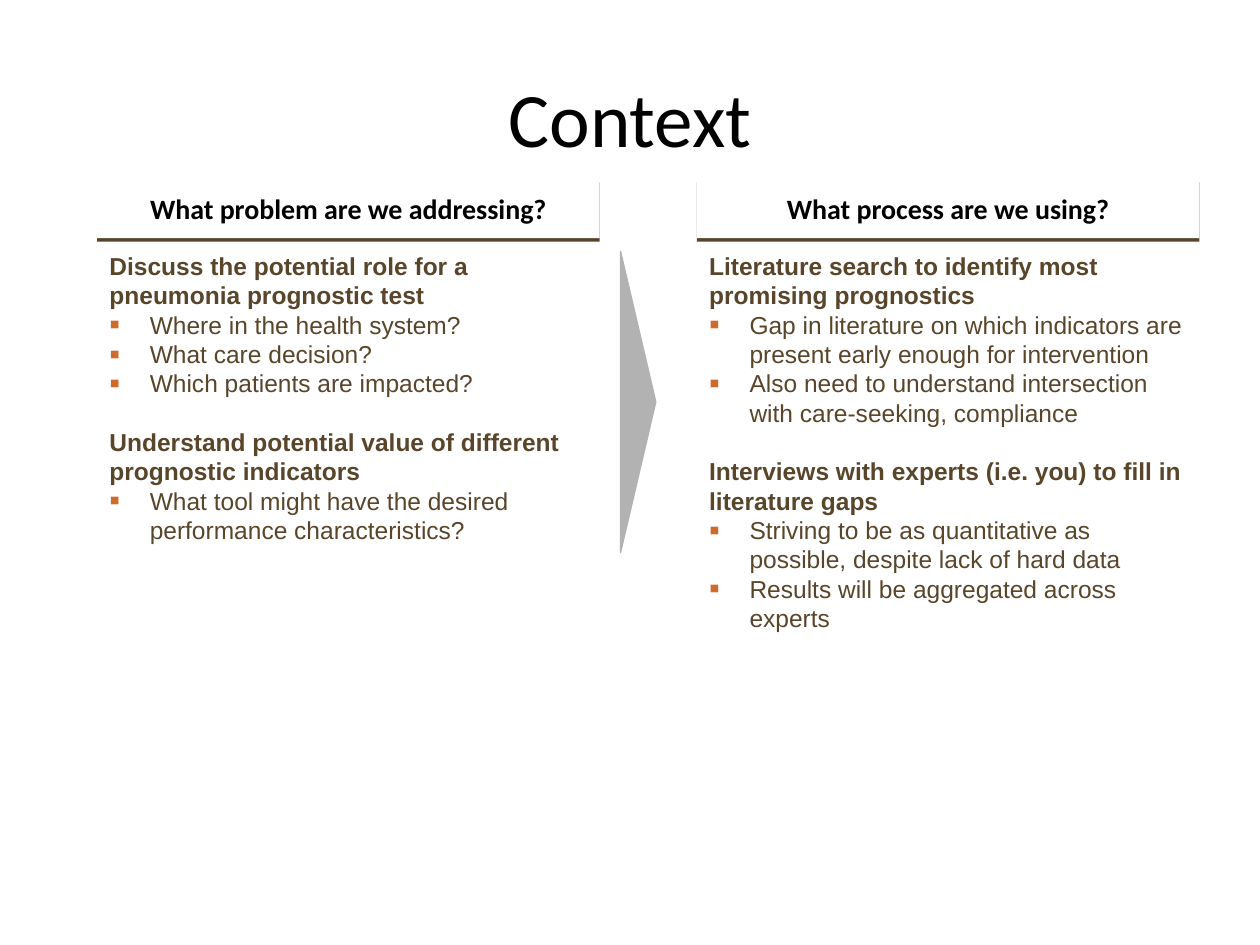
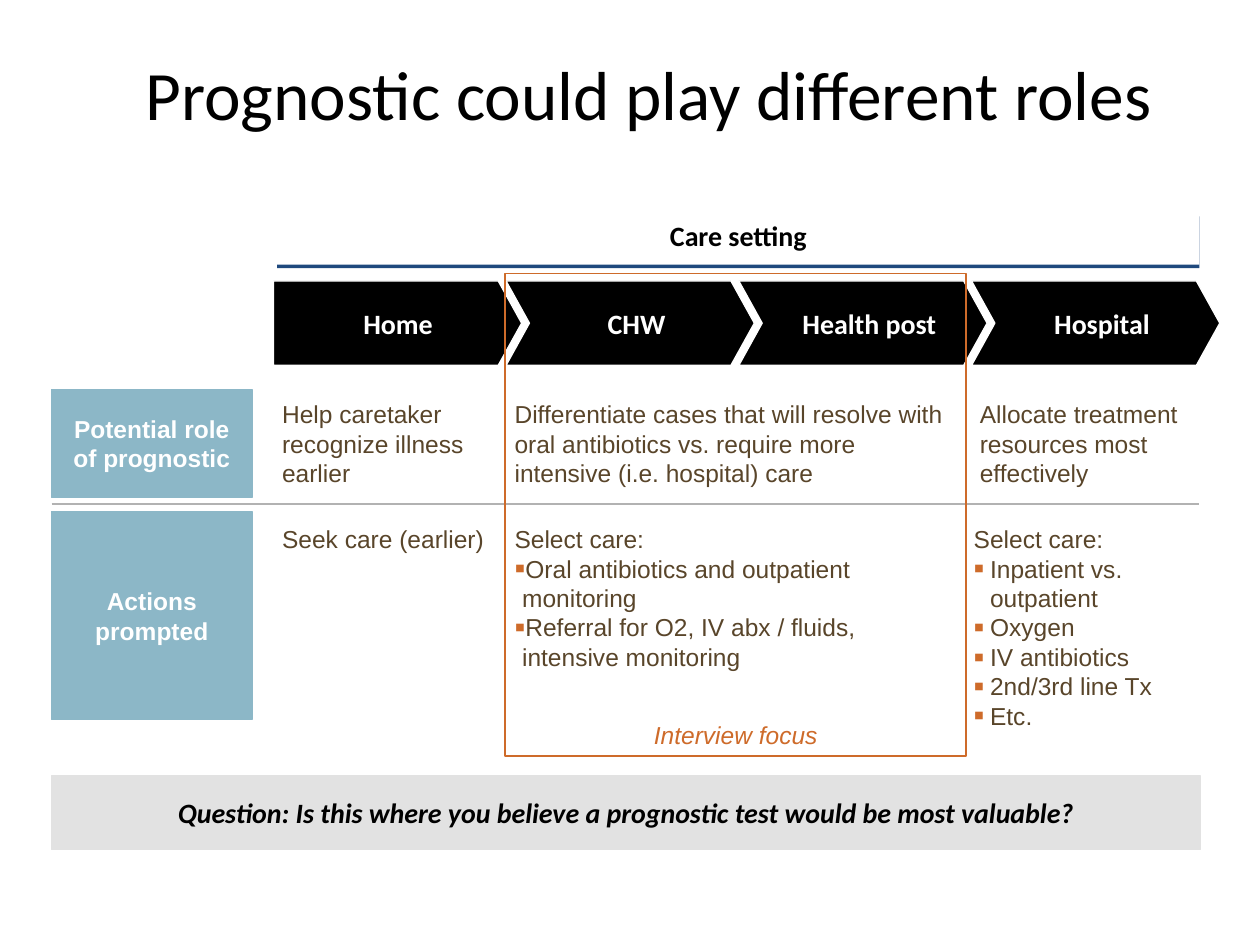
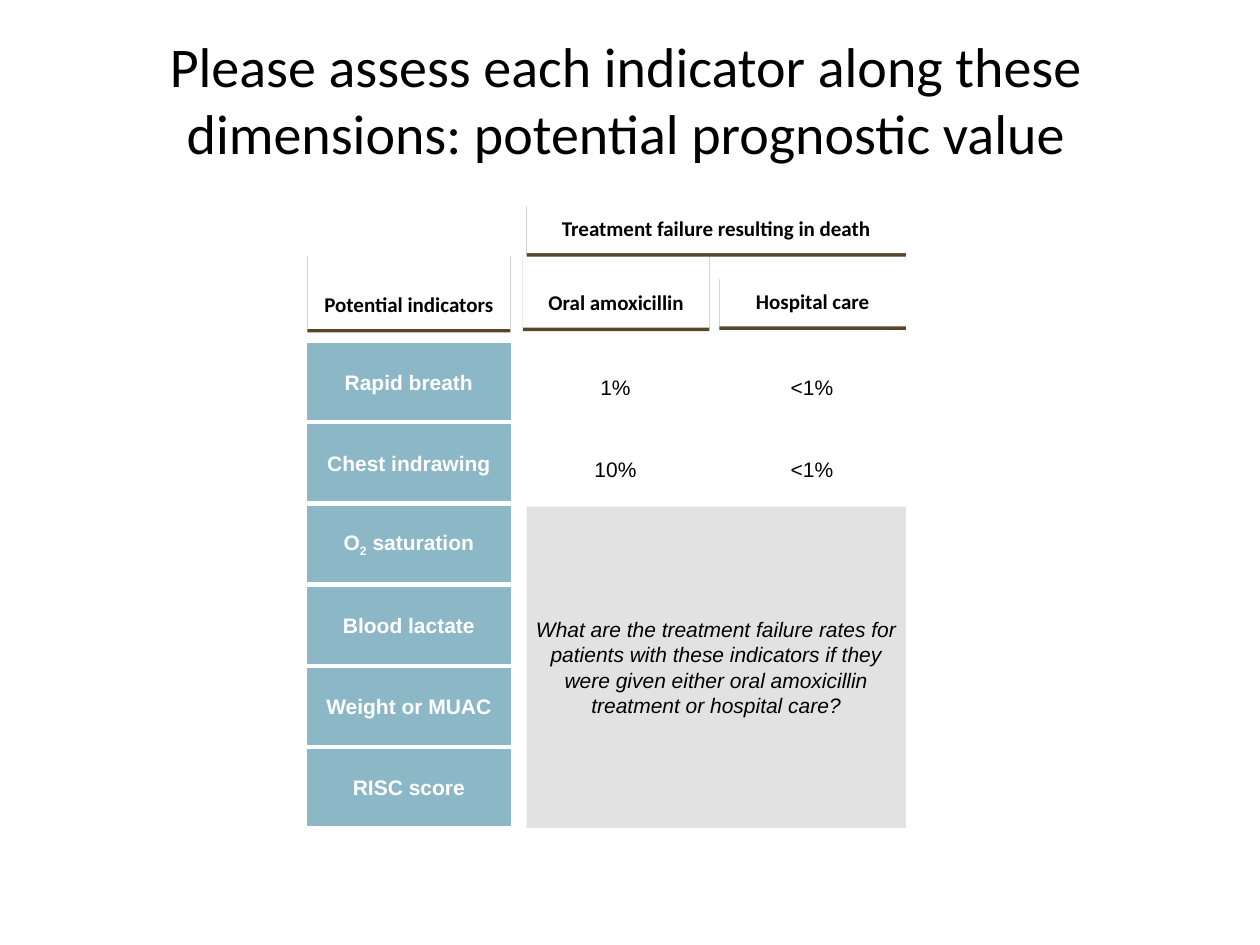
from dataclasses import dataclass
from typing import NamedTuple

from lxml.etree import SubElement
from pptx import Presentation
from pptx.dml.color import RGBColor
from pptx.enum.shapes import MSO_CONNECTOR, MSO_SHAPE
from pptx.enum.text import MSO_ANCHOR, PP_ALIGN
from pptx.oxml.ns import qn
from pptx.util import Emu, Inches, Pt


@dataclass(frozen=True)
class Theme:
    black: str = "000000"
    white: str = "FFFFFF"
    brown: str = "59452A"
    navy: str = "1F497D"
    orange: str = "CE6B2A"
    teal: str = "8CB7C7"
    pale: str = "E2E2E2"
    gray: str = "B2B2B2"
    sans: str = "Arial"
    head: str = "Calibri"
    title: float = 44
    wide: float = 39.6
    long: float = 32
    lead: float = 16
    body: float = 14
    small: float = 12
    gap: float = 16.5
    thin: float = 0.75
    rule: float = 1


class Box(NamedTuple):
    x: float
    y: float
    w: float
    h: float

    def cut(self, x, y, w, h):
        return Box(self.x + x, self.y + y, w, h)

    def size(self):
        return [Emu(round(n * CELL)) for n in self]


class Line(NamedTuple):
    text: str
    bold: bool = False
    dot: bool = False
    gap: bool = False
    hang: float = 0


THEME = Theme()
COLS, ROWS = 100, 75
CELL = Inches(10) / COLS
EVEN = (1, 1, 1, 1)
SLIM = (0.5, 0.5, 0.5, 0.5)
LEFT, MID = PP_ALIGN.LEFT, PP_ALIGN.CENTER
TOP, CORE, BASE = MSO_ANCHOR.TOP, MSO_ANCHOR.MIDDLE, MSO_ANCHOR.BOTTOM


def put(item, **values):
    for key, value in values.items():
        setattr(item, key, value)


def tint(code):
    return RGBColor.from_string(code)


def look(size, color, name=THEME.sans, **more):
    return dict(size=Pt(size), name=name, **more), color


def mark(para, line):
    props = para._p.get_or_add_pPr()
    if line.hang:
        hang = round(line.hang * CELL)
        props.set("marL", str(hang))
        props.set("indent", str(-hang))
    if line.dot:
        color = SubElement(props, qn("a:buClr"))
        SubElement(color, qn("a:srgbClr"), val=THEME.orange)
        SubElement(props, qn("a:buSzPct"), val="125000")
        SubElement(props, qn("a:buFont"), typeface=THEME.sans)
        SubElement(props, qn("a:buChar"), char="▪")


def write(shape, lines, style, align=MID, anchor=CORE, inset=EVEN):
    frame = shape.text_frame
    sides = ("margin_left", "margin_top", "margin_right", "margin_bottom")
    room = {key: Emu(round(n * CELL)) for key, n in zip(sides, inset)}
    put(frame, word_wrap=True, vertical_anchor=anchor, **room)
    form, color = style
    for spot, line in enumerate(lines):
        para = frame.add_paragraph() if spot else frame.paragraphs[0]
        mark(para, line)
        para.alignment = align
        if line.gap:
            para.space_before = Pt(THEME.gap)
        for turn, piece in enumerate(line.text.split("_")):
            run = para.add_run()
            run.text = piece
            put(run.font, **{"bold": line.bold, **form})
            run.font.color.rgb = tint(color)
            if turn % 2:
                run._r.get_or_add_rPr().set("baseline", "-25000")


def label(slide, box, lines, style, **more):
    write(slide.shapes.add_textbox(*box.size()), lines, style, **more)


def block(slide, box, fill=None, edge=None, kind=MSO_SHAPE.RECTANGLE, width=THEME.thin):
    shape = slide.shapes.add_shape(kind, *box.size())
    shape.shadow.inherit = False
    for part, code in ((shape.fill, fill), (shape.line.fill, edge)):
        if code:
            part.solid()
            part.fore_color.rgb = tint(code)
        else:
            part.background()
    if edge:
        shape.line.width = Pt(width)
    return shape


def title(slide, box, text, size, low=0.5):
    label(slide, box, [Line(text)], look(size, THEME.black, THEME.head), inset=(1, 0.5, 1, low))


def header(slide, box, text, size=THEME.lead, under=THEME.brown):
    shape = block(slide, box, THEME.white)
    glow = shape._element.spPr.find(qn("a:effectLst"))
    drop = SubElement(glow, qn("a:outerShdw"), dist="25400", dir="5400000", algn="ctr", rotWithShape="0")
    SubElement(drop, qn("a:srgbClr"), val=under)
    write(shape, [Line(text)], look(size, THEME.black, THEME.head, bold=True), anchor=BASE)


def tag(slide, box, text, size=THEME.body):
    shape = block(slide, box, THEME.teal, THEME.teal)
    write(shape, [Line(text)], look(size, THEME.white, bold=True))


def panel(slide, box, text, lines):
    top = 4.7
    header(slide, box.cut(0, 0, box.w, top), text)
    label(slide, box.cut(0, top, box.w, box.h - top), lines,
          look(THEME.body, THEME.brown), align=LEFT, anchor=TOP)


def flow(slide, box, names):
    step = 18.47
    for spot, name in enumerate(names):
        kind = MSO_SHAPE.CHEVRON if spot else MSO_SHAPE.PENTAGON
        shape = block(slide, box.cut(spot * step, 0, 19.7, box.h), THEME.black, THEME.white, kind)
        shape.adjustments[0] = 0.277
        write(shape, [Line(name)], look(THEME.lead, THEME.white, THEME.head, bold=True), inset=(2, 1, 1, 1))


def band(slide, box, name, deep, cells, anchor):
    step = 18.46
    tag(slide, box.cut(0, 0, 15.9, box.h), name)
    for col, span, inset, lines in cells:
        label(slide, box.cut(17.3 + col * step, 0, span * step, deep), lines,
              look(THEME.body, THEME.brown), align=LEFT, anchor=anchor, inset=inset)


def divide(slide, box):
    x, y, w, h = box.size()
    line = slide.shapes.add_connector(MSO_CONNECTOR.STRAIGHT, x, y, x + w, y + h)
    put(line.line, width=Pt(THEME.rule))
    line.line.color.rgb = tint(THEME.gray)
    SubElement(line._element.spPr, qn("a:effectLst"))


def stack(slide, box, names):
    step = box.h / len(names)
    for spot, name in enumerate(names):
        tag(slide, box.cut(0, spot * step, box.w, 6), name, THEME.small)


def rates(slide, box, rows):
    for down, row in enumerate(rows):
        for over, text in enumerate(row):
            label(slide, box.cut(over * 15.6, down * 6.5, 14.7, 6), [Line(text)],
                  look(THEME.small, THEME.black))


def dots(hang, *texts):
    return [Line(text, dot=True, hang=hang) for text in texts]


def context(slide):
    title(slide, Box(5, 3, 90, 12.5), "Context", THEME.title)
    left = [
        Line("Discuss the potential role for a pneumonia prognostic test", bold=True),
        *dots(3.2, "Where in the health system?", "What care decision?", "Which patients are impacted?"),
        Line("Understand potential value of different prognostic indicators", bold=True, gap=True),
        *dots(3.2, "What tool might have the desired performance characteristics?"),
    ]
    right = [
        Line("Literature search to identify most promising prognostics", bold=True),
        *dots(3.2, "Gap in literature on which indicators are present early enough for intervention",
              "Also need to understand intersection with care-seeking, compliance"),
        Line("Interviews with experts (i.e. you) to fill in literature gaps", bold=True, gap=True),
        *dots(3.2, "Striving to be as quantitative as possible, despite lack of hard data",
              "Results will be aggregated across experts"),
    ]
    panel(slide, Box(7.7, 14.2, 39.9, 44), "What problem are we addressing?", left)
    panel(slide, Box(55.3, 14.2, 39.9, 40.1), "What process are we using?", right)
    arrow = block(slide, Box(38.7, 30.5, 23.9, 2.8), THEME.gray, THEME.gray, MSO_SHAPE.ISOSCELES_TRIANGLE)
    arrow.rotation = 90


def roles(slide):
    title(slide, Box(7.7, 5.1, 87.6, 7.1), "Prognostic could play different roles", THEME.wide, 3.1)
    flow(slide, Box(21.7, 22.3, 75.1, 6.7), ["Home", "CHW", "Health post", "Hospital"])
    band(slide, Box(4.1, 30.9, 91.2, 8.6), "Potential role of prognostic", 8.6, [
        (0, 1, EVEN, [Line("Help caretaker recognize illness earlier")]),
        (1, 2, EVEN, [Line("Differentiate cases that will resolve with oral antibiotics"
                           " vs. require more intensive (i.e. hospital) care")]),
        (3, 1, EVEN, [Line("Allocate treatment resources most effectively")]),
    ], CORE)
    band(slide, Box(4.1, 40.6, 91.2, 16.5), "Actions prompted", 12.7, [
        (0, 1, EVEN, [Line("Seek care (earlier)", hang=1.3)]),
        (1, 2, EVEN, [Line("Select care:", hang=0.6),
                      *dots(0.6, "Oral antibiotics and outpatient monitoring",
                            "Referral for O2, IV abx / fluids, intensive monitoring")]),
        (3, 1, (0.5, 1, 0.5, 1), [Line("Select care:", hang=1.3),
                                  *dots(1.3, "Inpatient vs. outpatient", "Oxygen", "IV antibiotics",
                                        "2nd/3rd line Tx", "Etc.")]),
    ], TOP)
    divide(slide, Box(4.1, 40, 91.1, 0))
    header(slide, Box(22, 16.9, 73.2, 4.1), "Care setting", under=THEME.navy)
    focus = block(slide, Box(40.1, 21.7, 36.6, 38.3), edge=THEME.orange, width=THEME.rule)
    write(focus, [Line("Interview focus")], look(THEME.body, THEME.orange, italic=True),
          anchor=BASE, inset=SLIM)
    ask = block(slide, Box(4.1, 61.6, 91.2, 5.8), THEME.pale, THEME.pale)
    write(ask, [Line("Question: Is this where you believe a prognostic test would be most valuable?")],
          look(THEME.lead, THEME.black, THEME.head, bold=True, italic=True), inset=(1, 0.5, 1, 0.5))


def assess(slide):
    title(slide, Box(5.9, 3.8, 87.6, 8.1),
          "Please assess each indicator along these dimensions: potential prognostic value", THEME.long)
    stack(slide, Box(24.4, 27.3, 16.1, 38.64),
          ["Rapid breath", "Chest indrawing", "O_2_ saturation", "Blood lactate", "Weight or MUAC", "RISC score"])
    ask = block(slide, Box(41.8, 40.2, 30.1, 25.5), THEME.pale)
    write(ask, [Line("What are the treatment failure rates for patients with these indicators"
                     " if they were given either oral amoxicillin treatment or hospital care?")],
          look(THEME.small, THEME.black, italic=True), inset=SLIM)
    for box, text in (
        (Box(24.4, 20, 16.1, 6.1), "Potential indicators"),
        (Box(41.5, 19.9, 14.8, 6.1), "Oral amoxicillin"),
        (Box(57.1, 21.9, 14.8, 4), "Hospital care"),
        (Box(41.8, 16.1, 30.1, 4), "Treatment failure resulting in death"),
    ):
        header(slide, box, text, THEME.small)
    rates(slide, Box(41.5, 27.7, 30.3, 12.5), [("1%", "<1%"), ("10%", "<1%")])


def main():
    deck = Presentation()
    put(deck, slide_width=Emu(round(COLS * CELL)), slide_height=Emu(round(ROWS * CELL)))
    for build in (context, roles, assess):
        build(deck.slides.add_slide(deck.slide_layouts[6]))
    deck.save("out.pptx")


if __name__ == "__main__":
    main()
